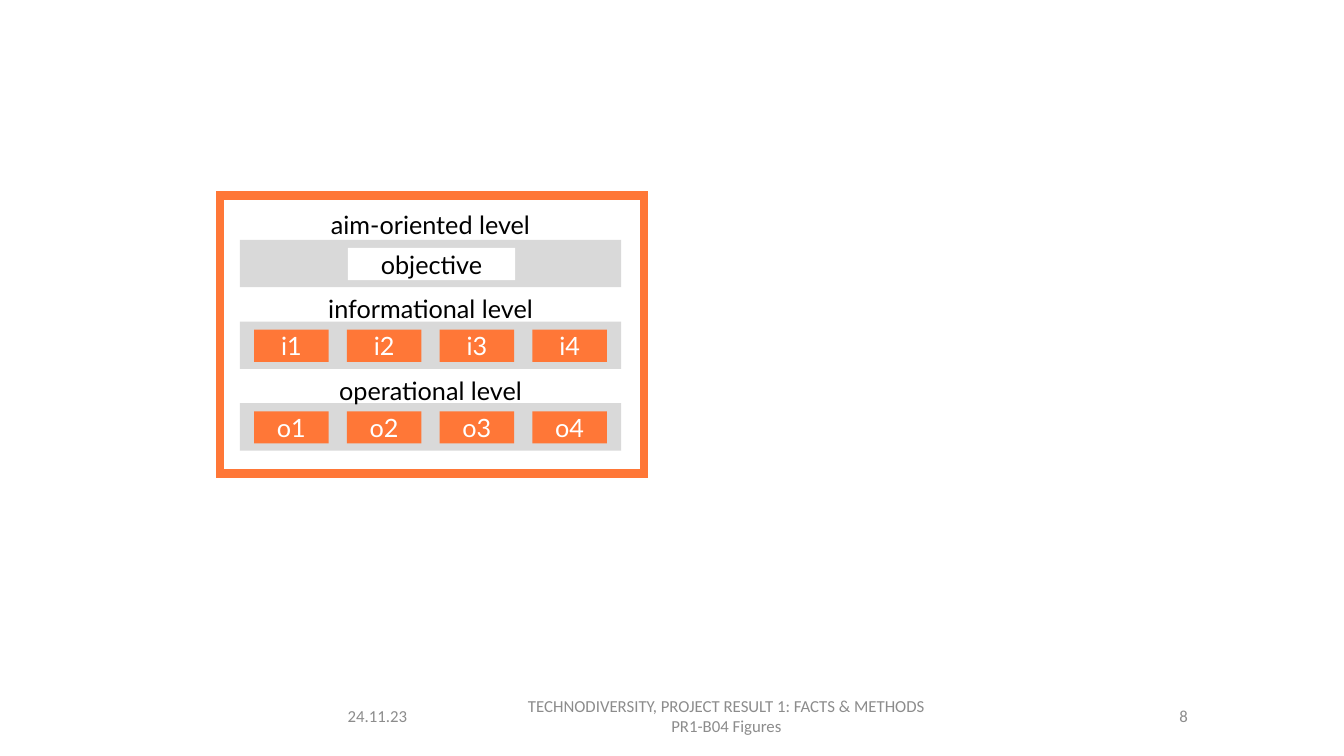
from pptx import Presentation
from pptx.dml.color import RGBColor
from pptx.enum.shapes import MSO_SHAPE
from pptx.enum.text import MSO_ANCHOR, PP_ALIGN
from pptx.oxml.ns import qn
from pptx.util import Inches, Pt
from lxml import etree

HUES = {"orange": "FF7737", "gray": "D9D9D9", "white": "FFFFFF",
        "black": "000000", "foot": "8C8C8C"}


def add_box(x, y, w, h, hue):
    box = slide.shapes.add_shape(
        MSO_SHAPE.RECTANGLE, Inches(x), Inches(y), Inches(w), Inches(h))
    box.shadow.inherit = False
    box.fill.solid()
    box.fill.fore_color.rgb = RGBColor.from_string(HUES[hue])
    box.line.fill.background()
    return box


def write(shape, lines, font, size, hue, align=PP_ALIGN.CENTER):
    frame = shape.text_frame
    frame.word_wrap = True
    frame.vertical_anchor = MSO_ANCHOR.MIDDLE
    for n, line in enumerate(lines):
        para = frame.paragraphs[0] if n == 0 else frame.add_paragraph()
        para.alignment = align
        run = para.add_run()
        run.text = line
        run.font.name = font
        run.font.size = Pt(size)
        run.font.color.rgb = RGBColor.from_string(HUES[hue])


deck = Presentation()
deck.slide_width, deck.slide_height = Inches(13.33), Inches(7.5)
slide = deck.slides.add_slide(deck.slide_layouts[6])

# Footer: date, project, page
feet = [
    (3.35, 1.34, ["24.11.23"], PP_ALIGN.LEFT),
    (4.86, 4.69, ["TECHNODIVERSITY, PROJECT RESULT 1: FACTS & METHODS",
                  "PR1-B04 Figures"], PP_ALIGN.CENTER),
    (9.77, 2.11, ["8"], PP_ALIGN.RIGHT),
]
for x, w, lines, align in feet:
    foot = slide.shapes.add_textbox(Inches(x), Inches(6.9), Inches(w), Inches(0.4))
    write(foot, lines, "Calibri", 12, "foot", align)

# Outer frame with sharp corners
outer = add_box(2.18, 1.94, 4.21, 2.76, "white")
outer.line.color.rgb = RGBColor.from_string(HUES["orange"])
outer.line.width = Pt(6)
edge = outer.element.spPr.find(qn("a:ln"))
etree.SubElement(edge, qn("a:miter")).set("lim", "800000")

# Levels: label, gray bar, boxes inside the bar
levels = [
    ("aim-oriented level", 2.03, []),
    ("informational level", 2.86, ["i1", "i2", "i3", "i4"]),
    ("operational level", 3.67, ["o1", "o2", "o3", "o4"]),
]
for row, (name, top, items) in enumerate(levels):
    y = 2.38 + 0.81 * row
    add_box(2.38, y, 3.78, 0.47, "gray")
    label = slide.shapes.add_textbox(
        Inches(2.38), Inches(top), Inches(3.78), Inches(0.4))
    write(label, [name], "Lato", 18, "black")
    for col, item in enumerate(items):
        cell = add_box(2.52 + 0.92 * col, y + 0.08, 0.74, 0.32, "orange")
        write(cell, [item], "Lato", 18, "white")

# Objective in the top bar
goal = add_box(3.45, 2.46, 1.66, 0.32, "white")
write(goal, ["objective"], "Lato", 18, "black")

deck.save("out.pptx")
